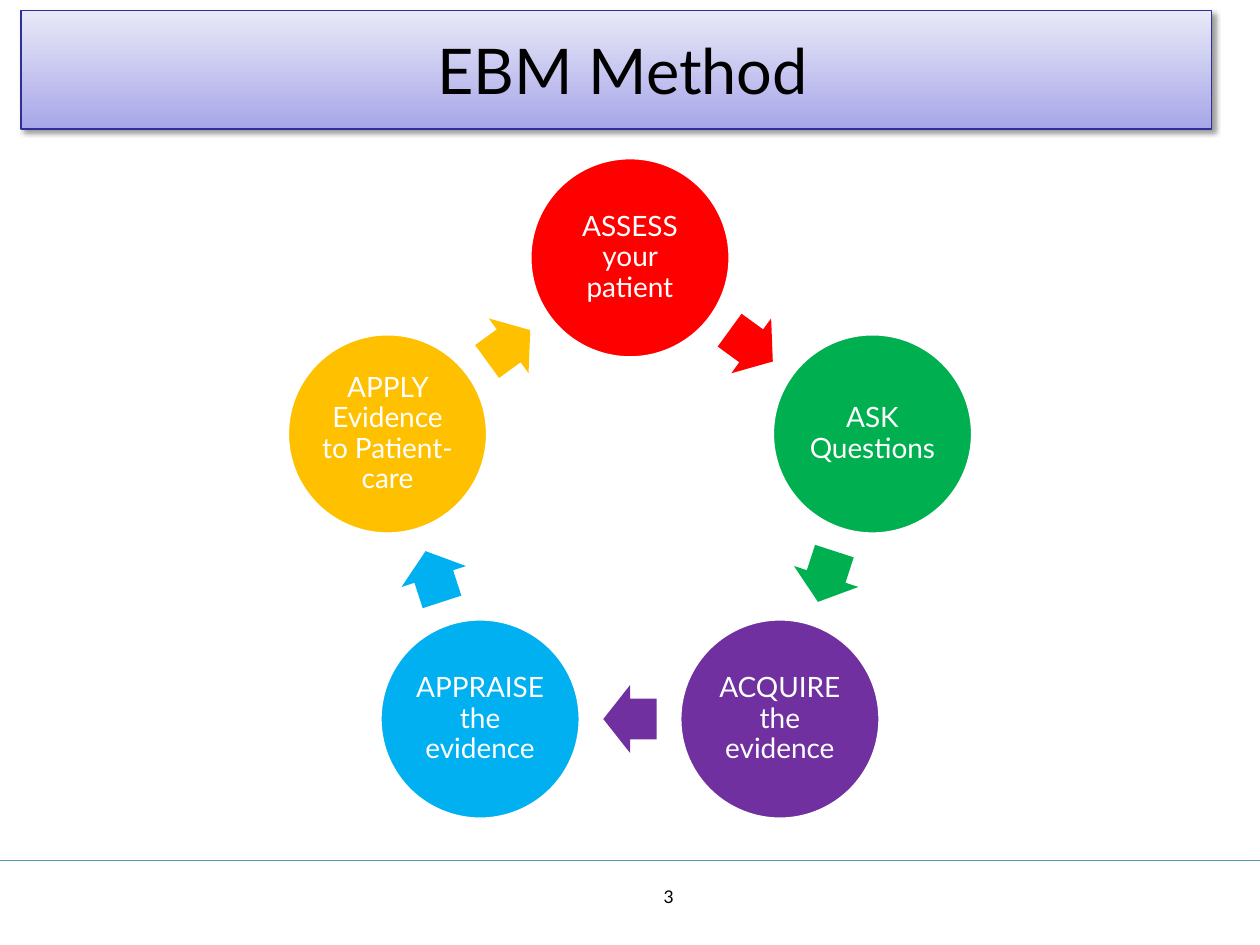
import math
from dataclasses import dataclass
from lxml import etree
from pptx import Presentation
from pptx.dml.color import RGBColor
from pptx.enum import shapes, text
from pptx.oxml import ns
from pptx.slide import Slide
from pptx.util import Pt

STEPS = [
    ("ASSESS your patient", "FF0000"),
    ("ASK Questions", "00B050"),
    ("ACQUIRE the evidence", "7030A0"),
    ("APPRAISE the evidence", "00B0F0"),
    ("APPLY Evidence to Patient-care", "FFC000"),
]
CENTER_X, CENTER_Y, RADIUS = 360, 293, 145.7
CIRCLE = 114.5
ARROW_WIDTH, ARROW_HEIGHT = 30.5, 38.7


def color(value):
    return RGBColor.from_string(value)


def add_effects(properties):
    return etree.SubElement(properties, ns.qn("a:effectLst"))


def ring_point(angle, radius):
    radians = math.radians(angle)
    return CENTER_X + radius * math.sin(radians), CENTER_Y - radius * math.cos(radians)


@dataclass
class Builder:
    slide: Slide
    font: str = "Lato"

    def label(self, frame, content, size, hex_color, alignment):
        paragraph = frame.paragraphs[0]
        paragraph.text = content
        paragraph.alignment = alignment
        paragraph.font.name = self.font
        paragraph.font.size = Pt(size)
        paragraph.font.color.rgb = color(hex_color)
        return paragraph

    def title(self, content, left, top, width, height):
        shape = self.slide.shapes.title
        shape.left, shape.top, shape.width, shape.height = map(Pt, (left, top, width, height))
        shape.fill.gradient()
        shape.fill.gradient_angle = 270
        for stop, hex_color in zip(shape.fill.gradient_stops, ("E8E8F8", "A8A7E8")):
            stop.color.rgb = color(hex_color)
        shape.line.color.rgb = color("2F2F98")
        shape.line.width = Pt(0.75)
        shadow = etree.SubElement(
            add_effects(shape.element.spPr), ns.qn("a:outerShdw"),
            blurRad=str(Pt(3)), dist=str(Pt(2)), dir="2700000", rotWithShape="0")
        shade = etree.SubElement(shadow, ns.qn("a:srgbClr"), val="000000")
        etree.SubElement(shade, ns.qn("a:alpha"), val="40000")
        frame = shape.text_frame
        frame.auto_size = text.MSO_AUTO_SIZE.NONE
        frame.vertical_anchor = text.MSO_ANCHOR.MIDDLE
        frame.margin_left = Pt(14.4)
        self.label(frame, content, 36, "000000", text.PP_ALIGN.CENTER)

    def shape(self, kind, x, y, width, height, fill):
        shape = self.slide.shapes.add_shape(
            kind, Pt(x - width / 2), Pt(y - height / 2), Pt(width), Pt(height))
        shape.shadow.inherit = False
        shape.fill.solid()
        shape.fill.fore_color.rgb = color(fill)
        shape.line.fill.background()
        return shape

    def circle(self, content, x, y, fill):
        circle = self.shape(shapes.MSO_SHAPE.OVAL, x, y, CIRCLE, CIRCLE, fill)
        circle.line.color.rgb = color("FFFFFF")
        circle.line.width = Pt(2)
        frame = circle.text_frame
        frame.word_wrap = True
        frame.vertical_anchor = text.MSO_ANCHOR.MIDDLE
        frame.margin_left = frame.margin_right = Pt(1.6)
        frame.margin_top = frame.margin_bottom = Pt(1.6)
        paragraph = self.label(frame, content, 16, "FFFFFF", text.PP_ALIGN.CENTER)
        paragraph.line_spacing = 0.9

    def arrow(self, x, y, rotation, fill):
        arrow = self.shape(
            shapes.MSO_SHAPE.RIGHT_ARROW, x, y, ARROW_WIDTH, ARROW_HEIGHT, fill)
        arrow.adjustments[0] = 0.6
        arrow.adjustments[1] = 0.5
        arrow.rotation = rotation

    def rule(self, y, width):
        line = self.slide.shapes.add_connector(
            shapes.MSO_CONNECTOR.STRAIGHT, 0, Pt(y), Pt(width), Pt(y))
        line.line.color.rgb = color("5698C5")
        line.line.width = Pt(0.75)
        add_effects(line.element.spPr)

    def page_number(self, content, left, top, width, height):
        box = self.slide.shapes.add_textbox(Pt(left), Pt(top), Pt(width), Pt(height))
        box.text_frame.word_wrap = False
        self.label(box.text_frame, content, 10, "000000", text.PP_ALIGN.LEFT)


def main():
    presentation = Presentation()
    presentation.slide_width, presentation.slide_height = Pt(720), Pt(540)
    builder = Builder(presentation.slides.add_slide(presentation.slide_layouts[5]))
    builder.rule(491.8, 720)
    builder.page_number("3", 372.2, 502.6, 27.4, 19.4)
    builder.title("EBM Method", 12, 6, 680.4, 67.7)
    step = 360 / len(STEPS)
    apothem = RADIUS * math.cos(math.radians(step / 2))
    for index, (content, fill) in enumerate(STEPS):
        angle = index * step
        middle = angle + step / 2
        builder.circle(content, *ring_point(angle, RADIUS), fill)
        builder.arrow(*ring_point(middle, apothem), middle, fill)
    presentation.save("out.pptx")


if __name__ == "__main__":
    main()
